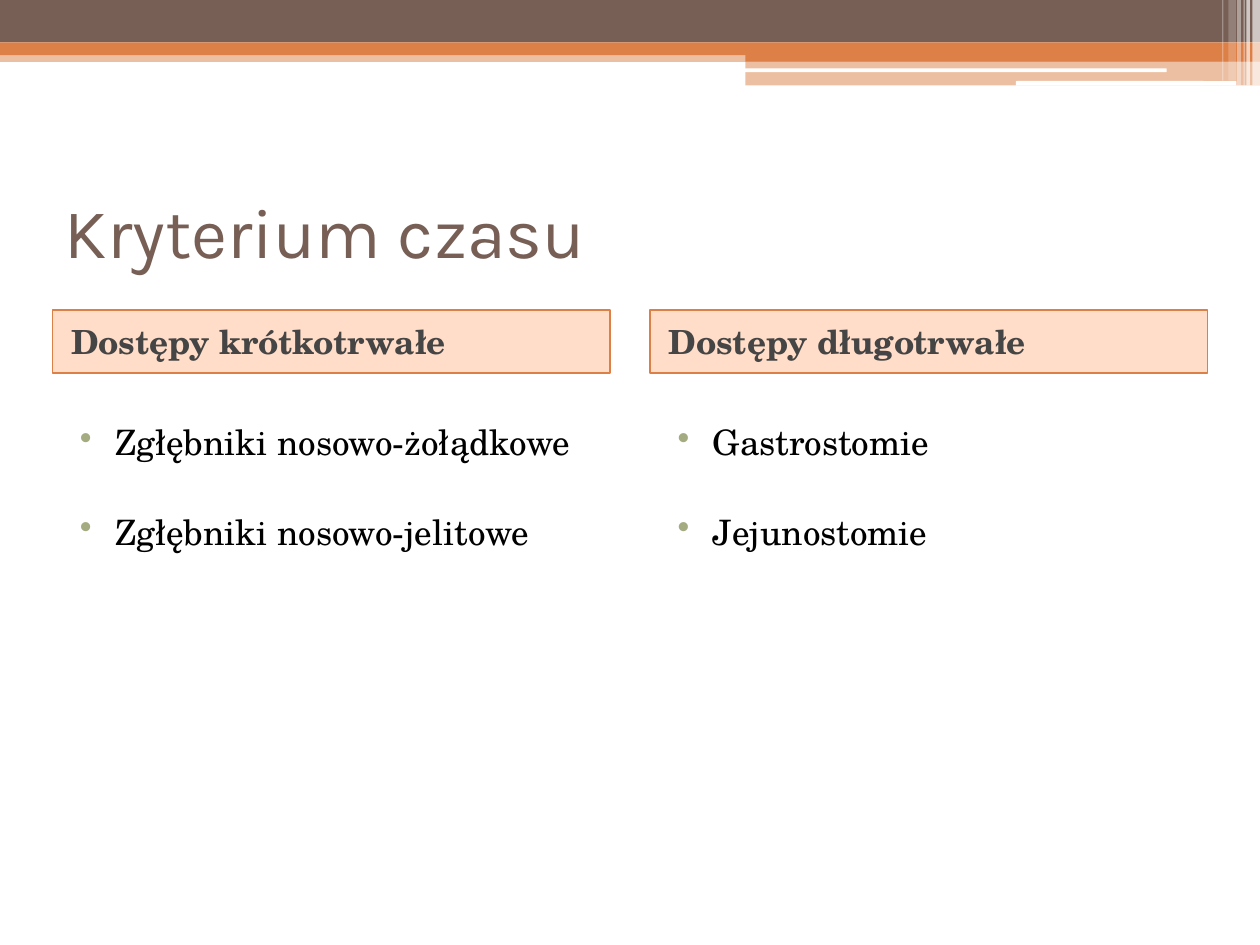
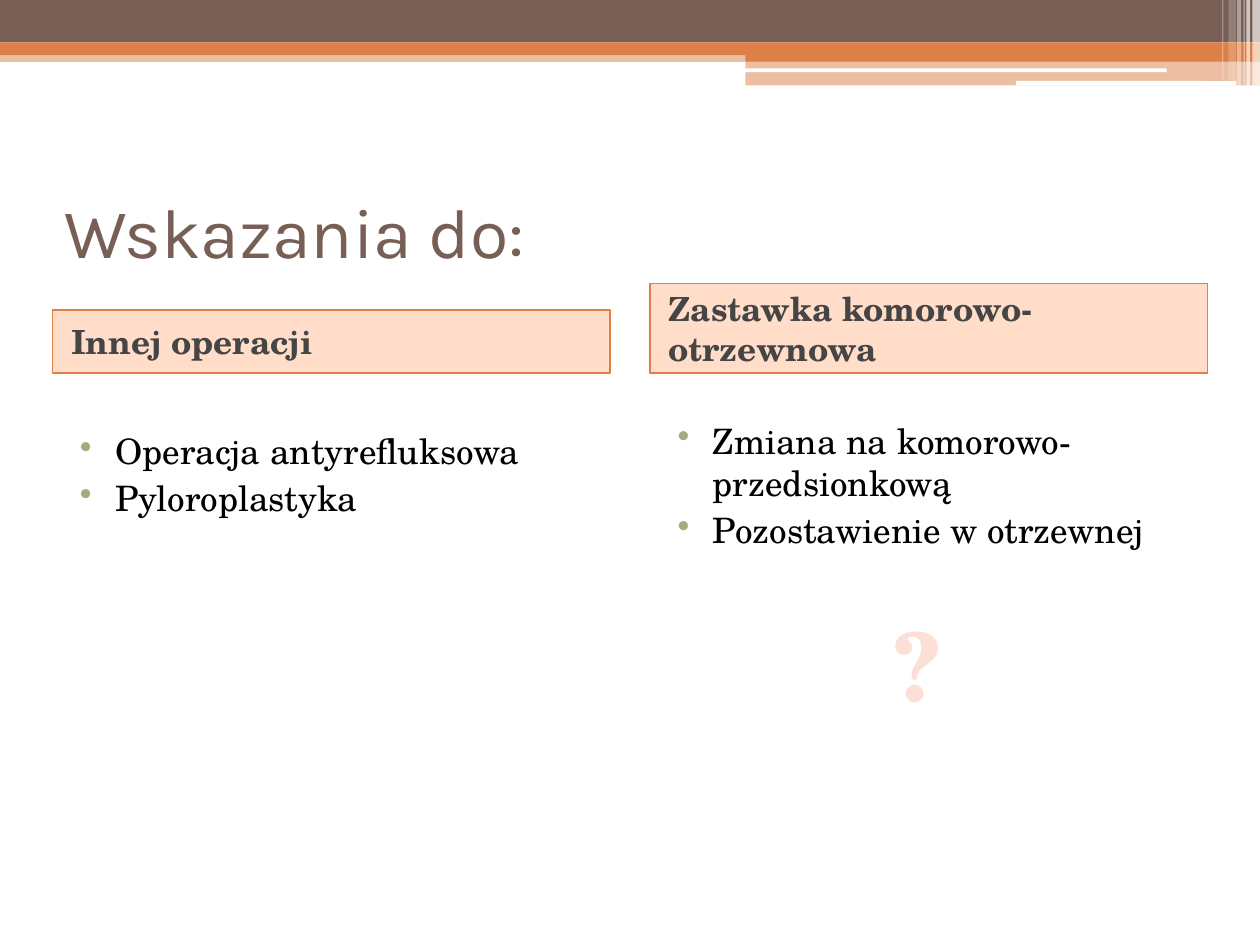
"""Two slides on feeding access and shunt decisions, each with two headed columns."""
from dataclasses import dataclass

from lxml import etree
from pptx import Presentation
from pptx.dml.color import RGBColor
from pptx.enum.shapes import MSO_SHAPE
from pptx.enum.text import MSO_ANCHOR, PP_ALIGN
from pptx.oxml.ns import qn
from pptx.util import Pt

RECTANGLE = MSO_SHAPE.RECTANGLE
ROUNDED = MSO_SHAPE.ROUNDED_RECTANGLE
MIDDLE = MSO_ANCHOR.MIDDLE
LEFT, CENTER = PP_ALIGN.LEFT, PP_ALIGN.CENTER


@dataclass(frozen=True)
class Theme:
    brown: str = "775F55"
    orange: str = "DD8047"
    white: str = "FFFFFF"
    heading_fill: str = "FF7825"
    heading_text: str = "454545"
    body_text: str = "000000"
    bullet: str = "A5AB81"
    question: str = "FCDFD6"
    title_font: str = "Karla"
    text_font: str = "TeX Gyre Schola"
    title_size: float = 40
    heading_size: float = 19
    body_size: float = 20
    question_size: float = 54


theme = Theme()

SLIDE_WIDTH, SLIDE_HEIGHT = 720, 540
MARGIN = 30
COLUMN_LEFTS = (MARGIN, 371.5)
COLUMN_WIDTH = 318.5
HEADING_BOTTOM = 213
BODY_BOTTOM = 519

BANDS = [
    (RECTANGLE, 0, 28.8, 720, 6.6, theme.orange, 50),
    (RECTANGLE, 0, 0, 720, 24.3, theme.brown, 100),
    (RECTANGLE, 0, 24.3, 720, 7.2, theme.orange, 100),
    (RECTANGLE, 426, 28, 294, 7.2, theme.orange, 100),
    (RECTANGLE, 426, 35.2, 294, 13.6, theme.orange, 50),
    (ROUNDED, 425.5, 39.1, 241.2, 2.2, theme.white, 100),
    (ROUNDED, 580.5, 46.3, 126, 2.7, theme.white, 100),
    (RECTANGLE, 715.6, 0, 4.4, 48.9, theme.white, 65),
    (RECTANGLE, 712.2, 0, 2.1, 48.9, theme.white, 65),
    (RECTANGLE, 710.6, 0, 0.7, 48.9, theme.white, 60),
    (RECTANGLE, 707, 0, 2.1, 48.9, theme.white, 40),
    (RECTANGLE, 702, 0, 4.3, 46.1, theme.white, 20),
    (RECTANGLE, 698.4, 0, 0.7, 46.1, theme.white, 30),
]

SLIDES = [
    {
        "title": "Kryterium czasu",
        "columns": [
            ("Dostępy krótkotrwałe", 36, 213,
             ["Zgłębniki nosowo-żołądkowe", "Zgłębniki nosowo-jelitowe"]),
            ("Dostępy długotrwałe", 36, 213, ["Gastrostomie", "Jejunostomie"]),
        ],
        "spacing": 2.0,
        "question": "",
    },
    {
        "title": "Wskazania do:",
        "columns": [
            ("Innej operacji", 36, 242, ["Operacja antyrefluksowa", "Pyloroplastyka"]),
            ("Zastawka komorowo-otrzewnowa", 51, 236.2,
             ["Zmiana na komorowo-przedsionkową", "Pozostawienie w otrzewnej"]),
        ],
        "spacing": 1.0,
        "question": "?",
    },
]


def add_block(page, kind, left, top, width, height, color, opacity):
    block = page.shapes.add_shape(kind, Pt(left), Pt(top), Pt(width), Pt(height))
    block.shadow.inherit = False
    block.line.fill.background()
    block.fill.solid()
    block.fill.fore_color.rgb = RGBColor.from_string(color)
    if opacity < 100:
        tint = block.fill._xPr.find(qn("a:solidFill"))[0]
        etree.SubElement(tint, qn("a:alpha"), val=str(opacity * 1000))
    return block


def write(box, lines, font, size, color, bold=False, align=LEFT):
    frame = box.text_frame
    frame.word_wrap = True
    frame.text = "\n".join(lines)
    for para in frame.paragraphs:
        para.alignment = align
        for span in para.runs:
            span.font.name = font
            span.font.size = Pt(size)
            span.font.bold = bold
            span.font.color.rgb = RGBColor.from_string(color)
    return frame


deck = Presentation()
deck.slide_width, deck.slide_height = Pt(SLIDE_WIDTH), Pt(SLIDE_HEIGHT)

for content in SLIDES:
    page = deck.slides.add_slide(deck.slide_layouts[6])
    for band in BANDS:
        add_block(page, *band)

    title = page.shapes.add_textbox(Pt(MARGIN), Pt(90), Pt(660), Pt(84))
    frame = write(title, [content["title"]], theme.title_font, theme.title_size, theme.brown)
    frame.vertical_anchor = MIDDLE

    for left, column in zip(COLUMN_LEFTS, content["columns"]):
        caption, height, body_top, items = column
        heading = add_block(page, RECTANGLE, left, HEADING_BOTTOM - height,
                            COLUMN_WIDTH, height, theme.heading_fill, 25)
        heading.line.color.rgb = RGBColor.from_string(theme.orange)
        heading.line.width = Pt(1)
        frame = write(heading, [caption], theme.text_font, theme.heading_size,
                      theme.heading_text, bold=True)
        frame.vertical_anchor = MIDDLE
        frame.paragraphs[0].space_before = Pt(3)
        frame.paragraphs[0]._p.get_or_add_pPr().set("marL", str(Pt(3.6)))

        body = page.shapes.add_textbox(Pt(left), Pt(body_top), Pt(COLUMN_WIDTH),
                                       Pt(BODY_BOTTOM - body_top))
        frame = write(body, items, theme.text_font, theme.body_size, theme.body_text)
        for para in frame.paragraphs:
            para.line_spacing = content["spacing"]
            para.space_before = Pt(3)
            properties = para._p.get_or_add_pPr()
            properties.set("marL", str(Pt(28.8)))
            properties.set("indent", str(Pt(-20.16)))
            bullet_color = etree.SubElement(properties, qn("a:buClr"))
            etree.SubElement(bullet_color, qn("a:srgbClr"), val=theme.bullet)
            etree.SubElement(properties, qn("a:buChar"), char="•")

    if content["question"]:
        question = page.shapes.add_textbox(Pt(501.8), Pt(343.4), Pt(44.6), Pt(72.7))
        frame = write(question, [content["question"]], theme.text_font,
                      theme.question_size, theme.question, bold=True, align=CENTER)
        frame.word_wrap = False

deck.save("out.pptx")
